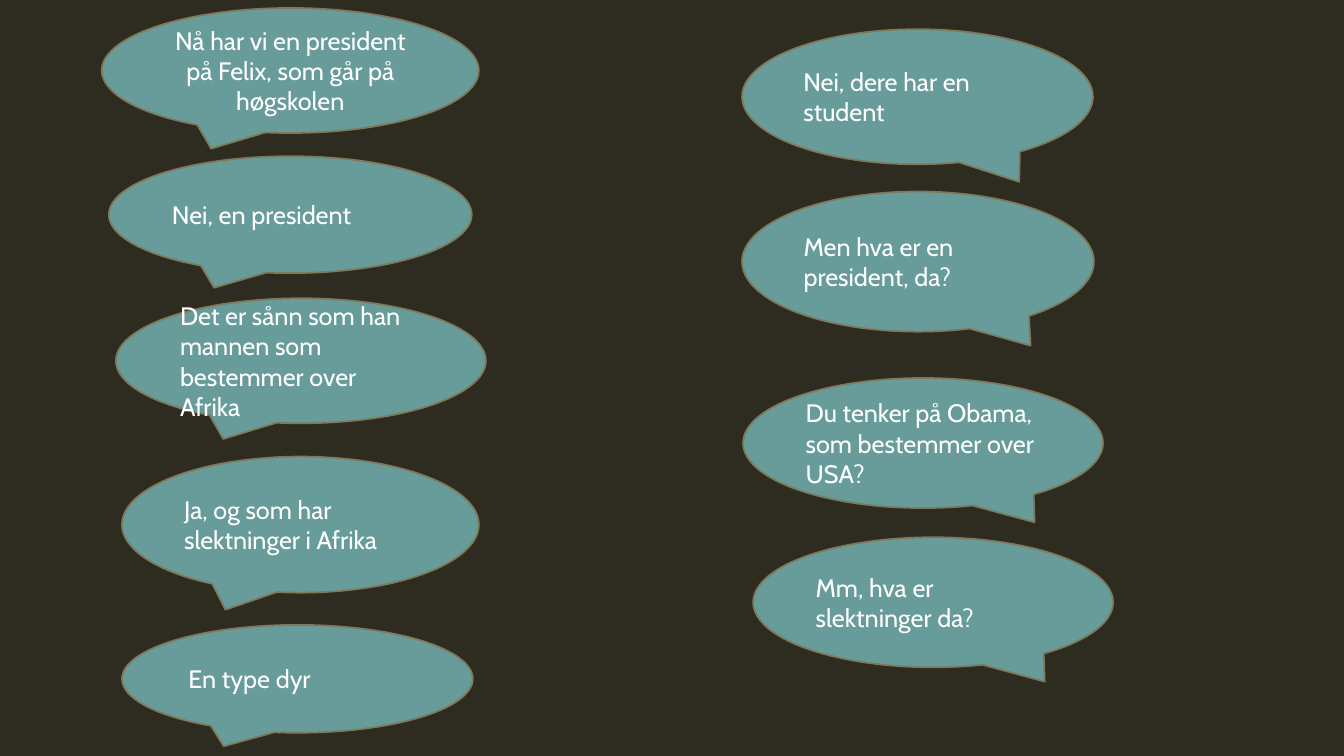
from dataclasses import dataclass

from pptx import Presentation
from pptx.dml.color import RGBColor
from pptx.enum import shapes, text
from pptx.util import Inches, Pt


@dataclass(frozen=True)
class Theme:
    background: RGBColor = RGBColor(0x2E, 0x2B, 0x21)
    bubble: RGBColor = RGBColor(0x68, 0x9C, 0x9A)
    outline: RGBColor = RGBColor(0x7D, 0x7A, 0x5C)
    words: RGBColor = RGBColor(0xFF, 0xFF, 0xFF)
    font: str = "Cabin"
    size: Pt = Pt(18)
    outline_width: Pt = Pt(1.25)


theme = Theme()
prs = Presentation()
prs.slide_width, prs.slide_height = Inches(13.33), Inches(7.5)
slide = prs.slides.add_slide(prs.slide_layouts[6])
slide.background.fill.solid()
slide.background.fill.fore_color.rgb = theme.background

# Dialogue in speaking order: line, position and size, tail tip from the centre
LEFT_TAIL = (-0.21, 0.625)
dialogue = [
    ("Nå har vi en president på Felix, som går på høgskolen", (1.01, 0.08, 3.74, 1.24), LEFT_TAIL),
    ("Nei, dere har en student", (7.36, 0.29, 3.48, 1.34), (0.29, 0.63)),
    ("Nei, en president", (1.08, 1.55, 3.6, 1.16), LEFT_TAIL),
    ("Men hva er en president, da?", (7.36, 1.9, 3.49, 1.39), (0.32, 0.6)),
    ("Det er sånn som han mannen som bestemmer over Afrika", (1.15, 2.96, 3.67, 1.24), LEFT_TAIL),
    ("Du tenker på Obama, som bestemmer over USA?", (7.37, 3.75, 3.57, 1.29), (0.31, 0.61)),
    ("Ja, og som har slektninger i Afrika", (1.21, 4.53, 3.54, 1.35), LEFT_TAIL),
    ("Mm, hva er slektninger da?", (7.47, 5.33, 3.57, 1.29), (0.31, 0.61)),
    ("En type dyr", (1.21, 6.2, 3.48, 1.07), LEFT_TAIL),
]

# Speech bubbles
bubbles = []
for line, box, tail in dialogue:
    bubble = slide.shapes.add_shape(
        shapes.MSO_SHAPE.OVAL_CALLOUT, *(Inches(length) for length in box))
    bubble.adjustments[0], bubble.adjustments[1] = tail
    bubble.shadow.inherit = False
    bubble.fill.solid()
    bubble.fill.fore_color.rgb = theme.bubble
    bubble.line.color.rgb = theme.outline
    bubble.line.width = theme.outline_width

    frame = bubble.text_frame
    frame.word_wrap = True
    frame.vertical_anchor = text.MSO_ANCHOR.MIDDLE
    frame.text = line
    speech = frame.paragraphs[0]
    speech.alignment = text.PP_ALIGN.LEFT
    speech.font.name = theme.font
    speech.font.size = theme.size
    speech.font.color.rgb = theme.words
    bubbles.append(bubble)

# The opening line is centred; the closing line is set in a little further
bubbles[0].text_frame.paragraphs[0].alignment = text.PP_ALIGN.CENTER
bubbles[-1].text_frame.margin_left = Inches(0.15)

prs.save("out.pptx")
